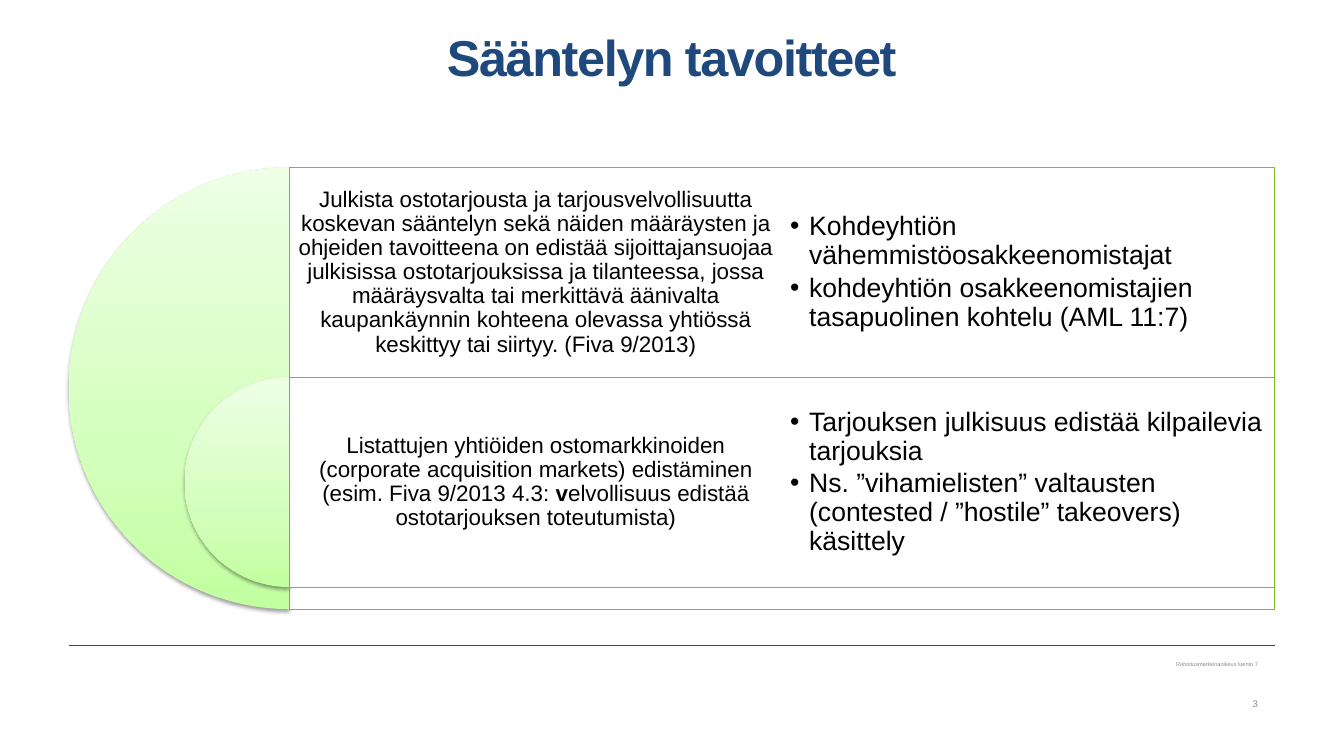
from lxml.etree import SubElement
from pptx import Presentation
from pptx.dml.color import RGBColor
from pptx.enum.shapes import MSO_CONNECTOR, MSO_SHAPE
from pptx.enum.text import MSO_ANCHOR, PP_ALIGN
from pptx.oxml import parse_xml
from pptx.oxml.ns import nsdecls, qn
from pptx.util import Cm, Pt

NAVY, GREEN, GREY, BLACK, WHITE = "1F497D", "78BE20", "8C8C8C", "000000", "FFFFFF"
STOPS = ((0, "C2FFA0"), (35, "D3FFBC"), (100, "EEFFE5"))
LEFT, WIDTH = 1.73, 30.4

GOALS = [
    (
        ["Julkista ostotarjousta ja tarjousvelvollisuutta koskevan sääntelyn sekä näiden "
         "määräysten ja ohjeiden tavoitteena on edistää sijoittajansuojaa julkisissa "
         "ostotarjouksissa ja tilanteessa, jossa määräysvalta tai merkittävä äänivalta "
         "kaupankäynnin kohteena olevassa yhtiössä keskittyy tai siirtyy. (Fiva 9/2013)"],
        ["Kohdeyhtiön vähemmistöosakkeenomistajat",
         "kohdeyhtiön osakkeenomistajien tasapuolinen kohtelu (AML 11:7)"],
    ),
    (
        [["Listattujen yhtiöiden ostomarkkinoiden (corporate acquisition markets) "
          "edistäminen (esim. Fiva 9/2013 4.3: ", "v",
          "elvollisuus edistää ostotarjouksen toteutumista)"]],
        ["Tarjouksen julkisuus edistää kilpailevia tarjouksia",
         "Ns. ”vihamielisten” valtausten (contested / ”hostile” takeovers) käsittely"],
    ),
]


def rgb(color):
    """Turn a hex string into a colour."""
    return RGBColor.from_string(color)


def add_bullet(p, indent):
    """Give a paragraph a hanging round bullet."""
    pPr = p._p.get_or_add_pPr()
    pPr.set("marL", str(Cm(indent)))
    pPr.set("indent", str(-Cm(indent)))
    SubElement(pPr, qn("a:buFont"), typeface="Arial")
    SubElement(pPr, qn("a:buChar"), char="•")


def add_text(s, box, paragraphs, size, color=BLACK, bold=False, align=PP_ALIGN.LEFT,
             anchor=MSO_ANCHOR.MIDDLE, insets=(0, 0, 0, 0), leading=1.0, after=0,
             bullet=False, spacing=None):
    """Add a text box; in a paragraph given as a list, every second run is bold."""
    tf = s.shapes.add_textbox(*map(Cm, box)).text_frame
    tf.word_wrap = True
    tf.vertical_anchor = anchor
    tf.margin_left, tf.margin_top, tf.margin_right, tf.margin_bottom = map(Cm, insets)
    for i, runs in enumerate(paragraphs):
        p = tf.paragraphs[0] if i == 0 else tf.add_paragraph()
        p.alignment, p.line_spacing, p.space_after = align, leading, Pt(after)
        if bullet:
            add_bullet(p, 0.48)
        for j, text in enumerate([runs] if isinstance(runs, str) else runs):
            r = p.add_run()
            r.text = text
            r.font.name, r.font.size = "Arial", Pt(size)
            r.font.bold = bold or j % 2 == 1
            r.font.color.rgb = rgb(color)
            if spacing is not None:
                r.font._element.set("spc", str(int(spacing * 100)))


def add_half_disc(s, x, y, size):
    """Add a shaded left half disc whose flat side stands at x."""
    sp = s.shapes.add_shape(MSO_SHAPE.PIE, Cm(x - size / 2), Cm(y), Cm(size), Cm(size))
    sp.adjustments[0], sp.adjustments[1] = 54, 162
    sp.line.fill.background()
    stops = "".join(f'<a:gs pos="{pos * 1000}"><a:srgbClr val="{color}"/></a:gs>'
                    for pos, color in STOPS)
    spPr = sp._element.spPr
    spPr.insert_element_before(parse_xml(
        f'<a:gradFill {nsdecls("a")} rotWithShape="1"><a:gsLst>{stops}</a:gsLst>'
        '<a:lin ang="16200000" scaled="0"/></a:gradFill>'), "a:ln")
    spPr.append(parse_xml(
        f'<a:effectLst {nsdecls("a")}><a:outerShdw blurRad="{Pt(3.1)}" dist="{Pt(1.6)}" '
        f'dir="5400000" rotWithShape="0"><a:srgbClr val="{BLACK}"><a:alpha val="38000"/>'
        '</a:srgbClr></a:outerShdw></a:effectLst>'))


def add_panel(s, x, y, w, h):
    """Add a slightly transparent white panel with a green outline."""
    sp = s.shapes.add_shape(MSO_SHAPE.RECTANGLE, Cm(x), Cm(y), Cm(w), Cm(h))
    sp.shadow.inherit = False
    sp.fill.solid()
    sp.fill.fore_color.rgb = rgb(WHITE)
    SubElement(sp._element.spPr.find(".//" + qn("a:srgbClr")), qn("a:alpha"), val="90000")
    sp.line.color.rgb = rgb(GREEN)
    sp.line.width = Pt(0.75)


def add_goals(s, x, y, w, h):
    """Add the nested half discs with one row of texts per goal."""
    row_h = h * 0.475
    edge = x + h / 2
    panel_w = x + w - edge
    col_w = panel_w / 2
    for i, (goal, points) in enumerate(GOALS):
        top = y + i * row_h
        size = h - i * (h - row_h)
        add_half_disc(s, edge, top, size)
        add_panel(s, edge, top, panel_w, size)
        add_text(s, (edge, top, col_w, row_h), goal, 16, align=PP_ALIGN.CENTER,
                 insets=(0.17,) * 4, leading=0.9, after=5.6)
        add_text(s, (edge + col_w, top, col_w, row_h), points, 19,
                 insets=(0.2,) * 4, leading=0.9, after=2.85, bullet=True)


def add_title(s, x, y, w, h):
    """Add the slide title."""
    add_text(s, (x, y, w, h), ["Sääntelyn tavoitteet"], 36, color=NAVY, bold=True,
             align=PP_ALIGN.CENTER, anchor=MSO_ANCHOR.TOP, leading=0.85, spacing=-1)


def add_footer(s, x, y, w):
    """Add the footer rule, the lecture name and the slide number."""
    rule = s.shapes.add_connector(MSO_CONNECTOR.STRAIGHT, Cm(x), Cm(y), Cm(x + w), Cm(y))
    rule.line.color.rgb = rgb(NAVY)
    rule.line.width = Pt(1)
    SubElement(rule._element.spPr, qn("a:effectLst"))
    style = dict(color=GREY, align=PP_ALIGN.RIGHT, insets=(0.25, 0.13, 0, 0.13))
    text_w = 13.41
    text_x = x + w - 0.43 - text_w
    add_text(s, (text_x, y + 0.28, text_w, 0.43), ["Rahoitusmarkkinaoikeus luento 7"], 4,
             leading=0.9, after=6, **style)
    add_text(s, (text_x, y + 1.24, text_w, 0.46), ["3"], 6.8, **style)


def main():
    """Build and save the slide."""
    prs = Presentation()
    prs.slide_width, prs.slide_height = Cm(33.87), Cm(19.05)
    s = prs.slides.add_slide(prs.slide_layouts[6])
    add_title(s, LEFT, 0.89, WIDTH, 3.33)
    add_goals(s, LEFT, 4.22, WIDTH, 11.13)
    add_footer(s, LEFT, 16.26, WIDTH)
    prs.save("out.pptx")


if __name__ == "__main__":
    main()
